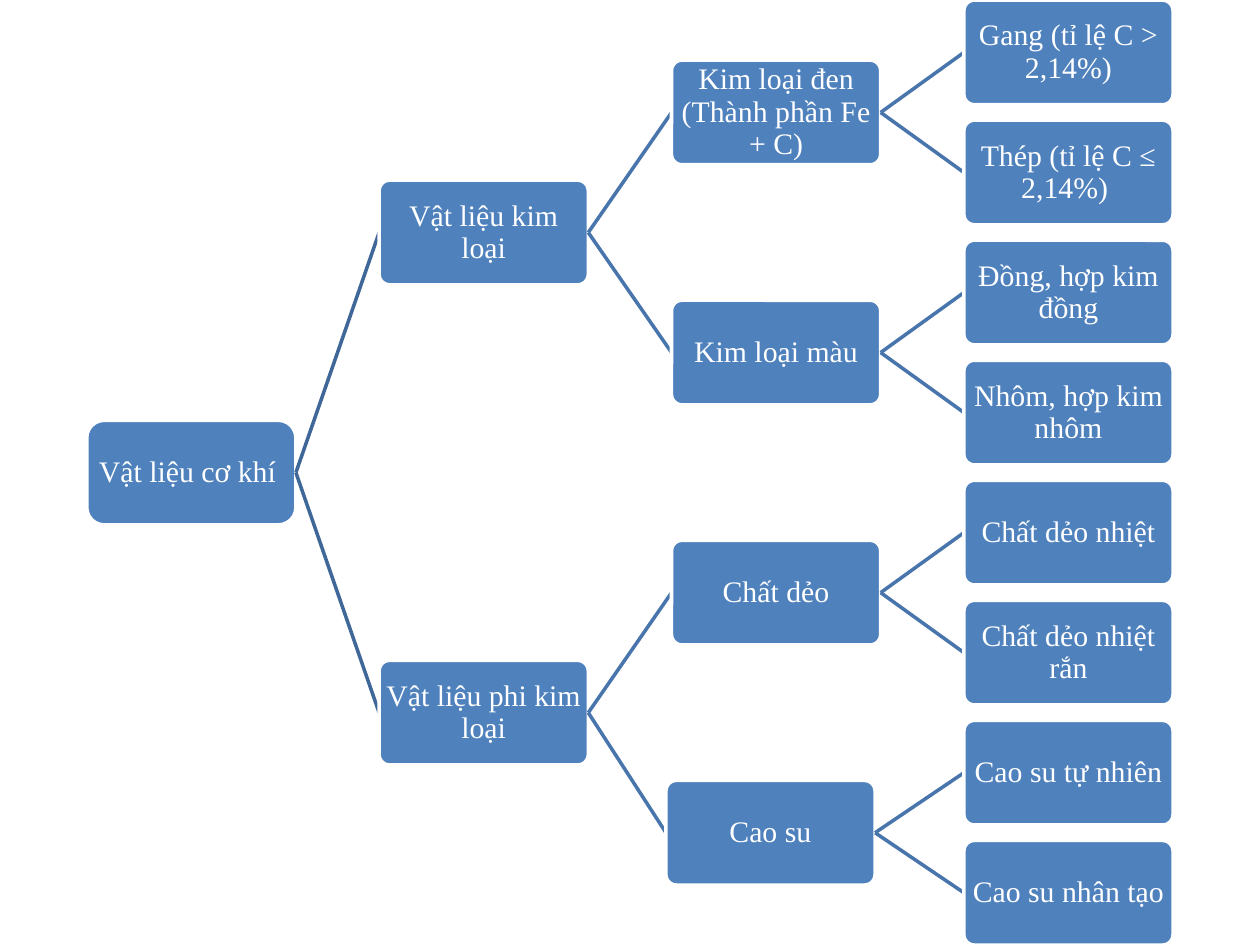
from lxml import etree
from pptx import Presentation
from pptx.dml.color import RGBColor
from pptx.enum.shapes import MSO_CONNECTOR, MSO_SHAPE
from pptx.enum.text import MSO_ANCHOR, PP_ALIGN
from pptx.oxml.ns import qn
from pptx.util import Pt

STRAIGHT = MSO_CONNECTOR.STRAIGHT
ROUNDED = MSO_SHAPE.ROUNDED_RECTANGLE
ROOT_SHAPE = MSO_SHAPE.FLOWCHART_ALTERNATE_PROCESS
MIDDLE = MSO_ANCHOR.MIDDLE
CENTER = PP_ALIGN.CENTER

COLORS = {
    "box": "4F81BD",
    "white": "FFFFFF",
    "root_branch": "3F6797",
    "branch": "4875AC",
}
FONT = "Times New Roman"

BOX_W, BOX_H = 119.5, 59.75
LEFT, COL_STEP = 49.6, 167.08
TOP, ROW_STEP = 0.1, 68.6
NUDGE = {"Cao su": -3.2}  # horizontal offset from the column

TREE = ("Vật liệu cơ khí ", [
    ("Vật liệu kim loại", [
        ("Kim loại đen (Thành phần Fe + C)", [
            ("Gang (tỉ lệ C > 2,14%)", []),
            ("Thép (tỉ lệ C ≤ 2,14%) ", []),
        ]),
        ("Kim loại màu", [
            ("Đồng, hợp kim đồng", []),
            ("Nhôm, hợp kim nhôm", []),
        ]),
    ]),
    ("Vật liệu phi kim loại", [
        ("Chất dẻo", [
            ("Chất dẻo nhiệt", []),
            ("Chất dẻo nhiệt rắn", []),
        ]),
        ("Cao su", [
            ("Cao su tự nhiên", []),
            ("Cao su nhân tạo", []),
        ]),
    ]),
])


def rgb(name):
    return RGBColor.from_string(COLORS[name])


def count_leaves(node):
    return sum(map(count_leaves, node[1])) or 1


def add_box(s, label, x, y, is_root):
    sp = s.shapes.add_shape(ROOT_SHAPE if is_root else ROUNDED,
                            Pt(x), Pt(y), Pt(BOX_W), Pt(BOX_H))
    if not is_root:
        sp.adjustments[0] = 0.1
    sp.shadow.inherit = False
    sp.fill.solid()
    sp.fill.fore_color.rgb = rgb("box")
    sp.line.color.rgb = rgb("white")
    sp.line.width = Pt(2)

    tf = sp.text_frame
    tf.word_wrap = True
    tf.vertical_anchor = MIDDLE
    tf.margin_left = tf.margin_right = Pt(0.9)
    tf.margin_top = tf.margin_bottom = Pt(0.9)
    p = tf.paragraphs[0]
    p.text = label
    p.alignment = CENTER
    p.line_spacing = 0.9
    p.font.name = FONT
    p.font.size = Pt(17)
    p.font.color.rgb = rgb("white")


def add_branch(s, start, end, color):
    line = s.shapes.add_connector(STRAIGHT, *map(Pt, start + end))
    line.line.color.rgb = rgb(color)
    line.line.width = Pt(2)
    etree.SubElement(line._element.spPr, qn("a:effectLst"))


def add_node(s, node, level=0, first_row=0, parent_end=None):
    """Draw a node centred on its leaf rows, then its subtree."""
    label, children = node
    x = LEFT + level * COL_STEP + NUDGE.get(label, 0)
    y = TOP + (first_row + (count_leaves(node) - 1) / 2) * ROW_STEP
    mid = y + BOX_H / 2
    if parent_end:
        add_branch(s, parent_end, (x, mid),
                   "root_branch" if level == 1 else "branch")
    add_box(s, label, x, y, level == 0)
    for child in children:
        add_node(s, child, level + 1, first_row, (x + BOX_W, mid))
        first_row += count_leaves(child)


def main():
    prs = Presentation()
    prs.slide_width, prs.slide_height = Pt(720), Pt(540)
    s = prs.slides.add_slide(prs.slide_layouts[6])
    add_node(s, TREE)
    prs.save("out.pptx")


if __name__ == "__main__":
    main()
